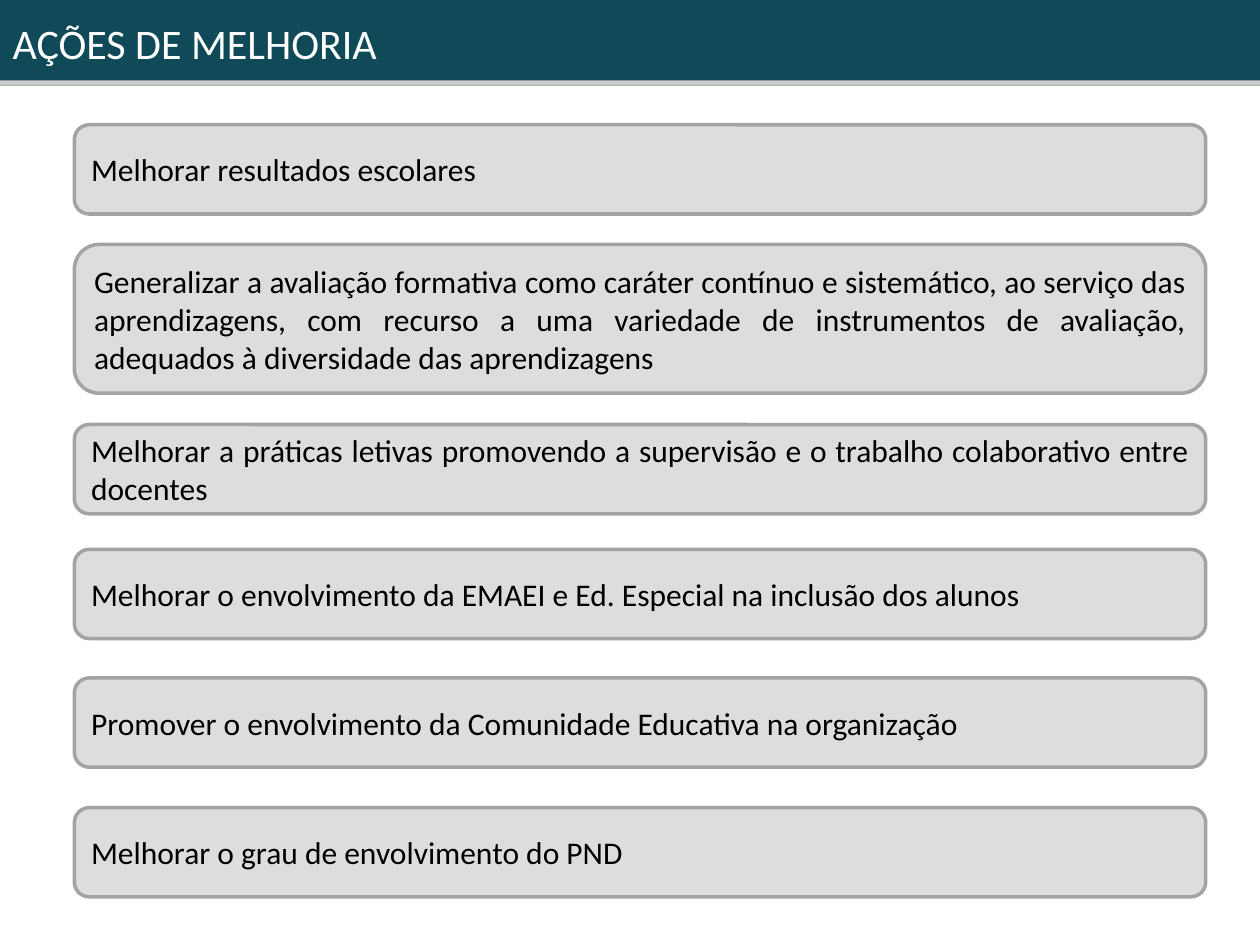
from pptx import Presentation
from pptx.dml.color import RGBColor
from pptx.enum import shapes, text
from pptx.util import Pt

TEAL = RGBColor(0x10, 0x4A, 0x58)
SILVER = RGBColor(0xCC, 0xCC, 0xCC)
PALE = RGBColor(0xDD, 0xDD, 0xDD)
GREY = RGBColor(0xA3, 0xA3, 0xA3)
WHITE = RGBColor(0xFF, 0xFF, 0xFF)
BLACK = RGBColor(0, 0, 0)
FONT = "Calibri"
WIDE, HIGH = 720, 540

ACTIONS = [
    (71.3, 51, "Melhorar resultados escolares"),
    (139.7, 85, "Generalizar a avaliação formativa como caráter contínuo e "
     "sistemático, ao serviço das aprendizagens, com recurso a uma variedade "
     "de instrumentos de avaliação, adequados à diversidade das aprendizagens"),
    (242.6, 51, "Melhorar a práticas letivas promovendo a supervisão e o "
     "trabalho colaborativo entre docentes"),
    (313.9, 51, "Melhorar o envolvimento da EMAEI e Ed. Especial na inclusão "
     "dos alunos"),
    (387.4, 51, "Promover o envolvimento da Comunidade Educativa na organização"),
    (461.5, 51, "Melhorar o grau de envolvimento do PND"),
]


def paint(shape, fill, line=None):
    """Give a shape a solid fill and an optional outline."""
    shape.fill.solid()
    shape.fill.fore_color.rgb = fill
    if line is None:
        shape.line.fill.background()
    else:
        shape.line.color.rgb = line
        shape.line.width = Pt(2)


def write(shape, words, size, color, align):
    """Write one middle-anchored paragraph into a shape."""
    frame = shape.text_frame
    frame.word_wrap = True
    frame.auto_size = text.MSO_AUTO_SIZE.NONE
    frame.vertical_anchor = text.MSO_ANCHOR.MIDDLE
    para = frame.paragraphs[0]
    para.alignment = align
    run = para.add_run()
    run.text = words
    run.font.name = FONT
    run.font.size = Pt(size)
    run.font.color.rgb = color


def add_block(slide, kind, left, top, width, height):
    """Add a preset shape without a shadow."""
    shape = slide.shapes.add_shape(kind, Pt(left), Pt(top), Pt(width), Pt(height))
    shape.shadow.inherit = False
    return shape


def add_header(slide, left, top, width, height):
    """Place the title band with a thin strip along its lower edge."""
    title = slide.shapes.title
    title.left, title.top = Pt(left), Pt(top)
    title.width, title.height = Pt(width), Pt(height)
    paint(title, TEAL)
    write(title, "AÇÕES DE MELHORIA", 24, WHITE, text.PP_ALIGN.LEFT)
    strip = 3
    rule = add_block(slide, shapes.MSO_SHAPE.RECTANGLE,
                     left, top + height - strip, width, strip)
    paint(rule, SILVER)


def add_actions(slide, left, width):
    """Place one rounded card for each action in a column."""
    for top, height, words in ACTIONS:
        card = add_block(slide, shapes.MSO_SHAPE.ROUNDED_RECTANGLE,
                         left, top, width, height)
        paint(card, PALE, GREY)
        write(card, words, 18, BLACK, text.PP_ALIGN.JUSTIFY)


def main():
    """Build the slide and save it."""
    deck = Presentation()
    deck.slide_width, deck.slide_height = Pt(WIDE), Pt(HIGH)
    slide = deck.slides.add_slide(deck.slide_layouts[5])
    add_header(slide, 0, 0, WIDE, 49)
    add_actions(slide, 42.5, 646.5)
    deck.save("out.pptx")


if __name__ == "__main__":
    main()
